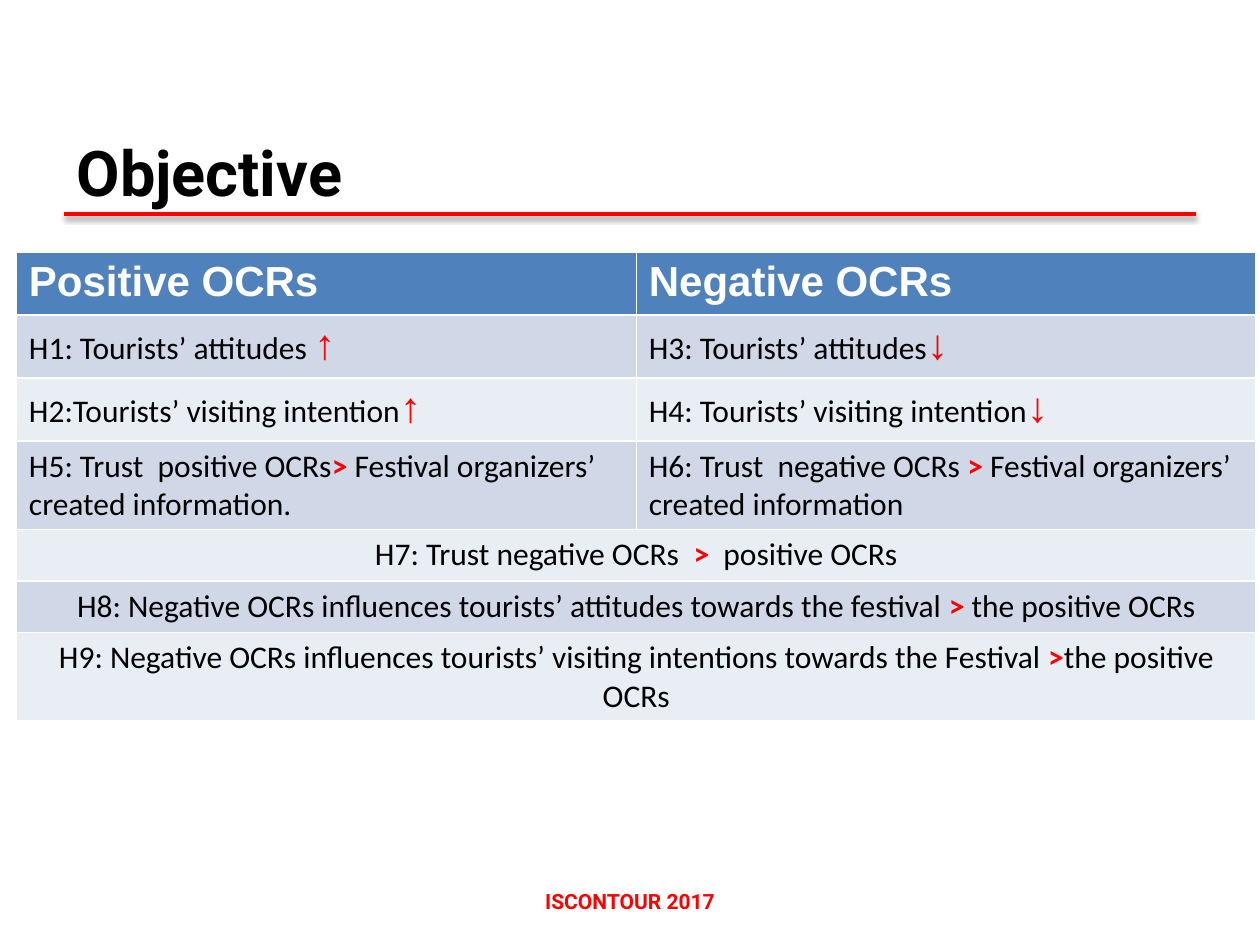
from dataclasses import dataclass

import pptx
import pptx.dml.color
import pptx.enum.shapes
import pptx.enum.text
import pptx.oxml
import pptx.oxml.ns
import pptx.slide
import pptx.table
import pptx.text.text
import pptx.util
from pptx.util import Inches

RGBColor = pptx.dml.color.RGBColor
ALIGN = pptx.enum.text.PP_ALIGN
ANCHOR = pptx.enum.text.MSO_ANCHOR

BLACK = RGBColor(0x00, 0x00, 0x00)
WHITE = RGBColor(0xFF, 0xFF, 0xFF)
RED = RGBColor(0xFF, 0x00, 0x00)
HEADER_BLUE = RGBColor(0x4F, 0x81, 0xBD)
BANDS = (RGBColor(0xE9, 0xED, 0xF4), RGBColor(0xD0, 0xD8, 0xE8))

MARGIN = 0.51
CONTENT_WIDTH = 8.98
ROW_HEIGHT = 0.41
COLUMN_WIDTH = 4.92


def font_format(name: str, size: int, color: RGBColor, bold: bool) -> dict:
    return {"name": name, "size": pptx.util.Pt(size), "bold": bold, "color": color}


TITLE = font_format("Roboto", 36, BLACK, True)
FOOTER = font_format("Roboto", 12, RED, True)
HEADER = font_format("Arial", 24, WHITE, True)
BODY = font_format("Calibri", 18, BLACK, False)
GREATER = font_format("Calibri", 18, RED, True)
ARROW = font_format("Arial", 24, RED, True)


@dataclass(frozen=True)
class Run:
    text: str
    format: dict


@dataclass(frozen=True)
class TextBox:
    run: Run
    left: float
    top: float
    width: float
    height: float
    alignment: ALIGN
    anchor: ANCHOR


def effect(text: str, arrow: str) -> list[Run]:
    return [Run(text, BODY), Run(arrow, ARROW)]


def comparison(before: str, after: str, sign: str = ">") -> list[Run]:
    return [Run(before, BODY), Run(sign, GREATER), Run(after, BODY)]


TEXT_BOXES = [
    TextBox(Run("ISCONTOUR 2017", FOOTER), 3.19, 7, 3.62, 0.3,
            ALIGN.CENTER, ANCHOR.TOP),
    TextBox(Run("Objective", TITLE), MARGIN, 0.21, CONTENT_WIDTH, 1.5,
            ALIGN.LEFT, ANCHOR.BOTTOM),
]

# A row with a single entry spans both columns.
HYPOTHESES = [
    [[Run("Positive OCRs", HEADER)], [Run("Negative OCRs", HEADER)]],
    [effect("H1: Tourists’ attitudes ", "↑"),
     effect("H3: Tourists’ attitudes", "↓")],
    [effect("H2:Tourists’ visiting intention", "↑"),
     effect("H4: Tourists’ visiting intention", "↓")],
    [comparison("H5: Trust  positive OCRs",
                "Festival organizers’ created information.", "> "),
     comparison("H6: Trust  negative OCRs ",
                " Festival organizers’ created information")],
    [comparison("H7: Trust negative OCRs  ", "  positive OCRs")],
    [comparison("H8: Negative OCRs influences tourists’ attitudes "
                "towards the festival ", " the positive OCRs")],
    [comparison("H9: Negative OCRs influences tourists’ visiting intentions "
                "towards the Festival ", "the positive OCRs")],
]


def write_runs(paragraph: pptx.text.text._Paragraph, runs: list[Run]) -> None:
    for item in runs:
        run = paragraph.add_run()
        run.text = item.text
        for attribute, value in item.format.items():
            if attribute == "color":
                run.font.color.rgb = value
            else:
                setattr(run.font, attribute, value)


def add_text_box(slide: pptx.slide.Slide, box: TextBox) -> None:
    shape = slide.shapes.add_textbox(
        Inches(box.left), Inches(box.top), Inches(box.width), Inches(box.height))
    frame = shape.text_frame
    frame.word_wrap = True
    frame.vertical_anchor = box.anchor
    paragraph = frame.paragraphs[0]
    paragraph.alignment = box.alignment
    write_runs(paragraph, [box.run])


def add_title_rule(slide: pptx.slide.Slide) -> None:
    """Draw the red line under the title, with its soft shadow."""
    top = Inches(1.7)
    rule = slide.shapes.add_connector(
        pptx.enum.shapes.MSO_CONNECTOR.STRAIGHT,
        Inches(MARGIN), top, Inches(MARGIN + CONTENT_WIDTH), top)
    rule.line.color.rgb = RED
    rule.line.width = pptx.util.Pt(2)
    blur, distance = pptx.util.Pt(3.1), pptx.util.Pt(1.6)
    rule._element.spPr.append(pptx.oxml.parse_xml(
        f'<a:effectLst {pptx.oxml.ns.nsdecls("a")}>'
        f'<a:outerShdw blurRad="{blur}" dist="{distance}" dir="5400000" '
        'rotWithShape="0"><a:srgbClr val="000000"><a:alpha val="38000"/>'
        '</a:srgbClr></a:outerShdw></a:effectLst>'))


def fill_cell(cell: pptx.table._Cell, color: RGBColor) -> None:
    cell.fill.solid()
    cell.fill.fore_color.rgb = color


def add_hypothesis_table(slide: pptx.slide.Slide) -> None:
    table = slide.shapes.add_table(
        len(HYPOTHESES), 2, Inches(0.13), Inches(2),
        Inches(2 * COLUMN_WIDTH), Inches(ROW_HEIGHT * len(HYPOTHESES))).table
    for column in table.columns:
        column.width = Inches(COLUMN_WIDTH)
    for index, entries in enumerate(HYPOTHESES):
        table.rows[index].height = Inches(ROW_HEIGHT)
        cells = table.rows[index].cells
        for cell in cells:
            fill_cell(cell, BANDS[index % 2] if index else HEADER_BLUE)
        spans_row = len(entries) == 1
        if spans_row:
            table.cell(index, 0).merge(table.cell(index, 1))
        for cell, runs in zip(cells, entries):
            paragraph = cell.text_frame.paragraphs[0]
            paragraph.alignment = ALIGN.CENTER if spans_row else ALIGN.LEFT
            write_runs(paragraph, runs)


def main() -> None:
    presentation = pptx.Presentation()
    presentation.slide_width = Inches(10)
    presentation.slide_height = Inches(7.5)
    slide = presentation.slides.add_slide(presentation.slide_layouts[6])
    add_title_rule(slide)
    for box in TEXT_BOXES:
        add_text_box(slide, box)
    add_hypothesis_table(slide)
    presentation.save("out.pptx")


if __name__ == "__main__":
    main()
